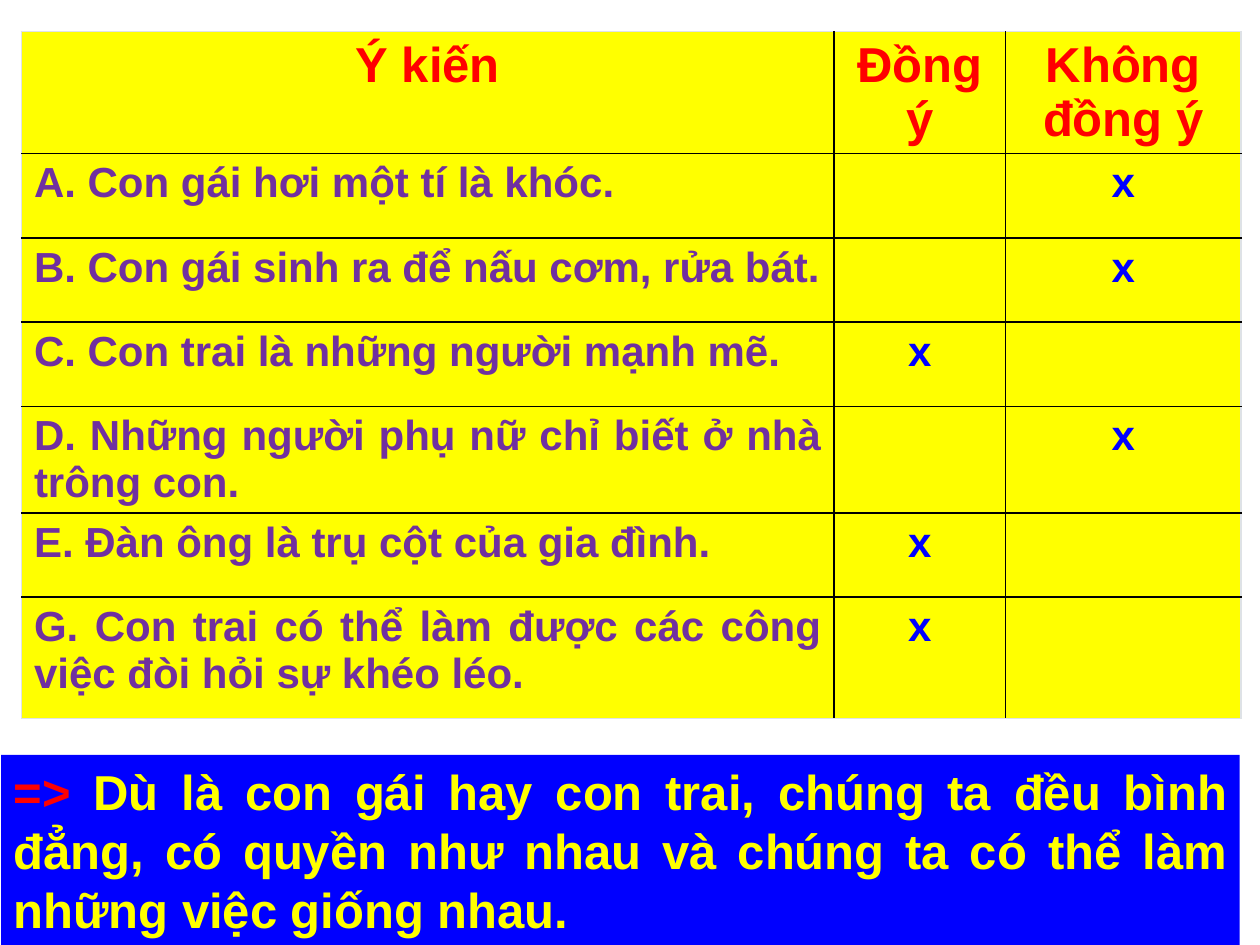
from dataclasses import dataclass

import pptx
import pptx.dml.color
import pptx.enum.shapes
import pptx.enum.text
import pptx.oxml
import pptx.oxml.ns
import pptx.util
from pptx.util import Inches

ALIGN = pptx.enum.text.PP_ALIGN


@dataclass(frozen=True)
class Theme:
    font: str = "Arial"
    heading_size: int = 28
    body_size: int = 24
    red: str = "FF0000"
    yellow: str = "FFFF00"
    blue: str = "0000FF"
    purple: str = "7030A0"
    inner_line: str = "000000"
    outer_line: str = "DEE2E6"


THEME = Theme()

HEADERS = ["Ý kiến", "Đồng ý", "Không đồng ý"]
# Each opinion with whether the class agrees
OPINIONS = [
    ("A. Con gái hơi một tí là khóc.", False),
    ("B. Con gái sinh ra để nấu cơm, rửa bát.", False),
    ("C. Con trai là những người mạnh mẽ.", True),
    ("D. Những người phụ nữ chỉ biết ở nhà trông con.", False),
    ("E. Đàn ông là trụ cột của gia đình.", True),
    ("G. Con trai có thể làm được các công việc đòi hỏi sự khéo léo.", True),
]
CONCLUSION = ("Dù là con gái hay con trai, chúng ta đều bình đẳng, có quyền như nhau "
              "và chúng ta có thể làm những việc giống nhau.")
COLUMN_WIDTHS = [6.45, 1.36, 1.87]
ROW_HEIGHTS = [0.38] + [0.67] * 5 + [0.96]


def rgb(color):
    return pptx.dml.color.RGBColor.from_string(color)


def fill_solid(target, color):
    target.fill.solid()
    target.fill.fore_color.rgb = rgb(color)


def format_font(font, size, color=None):
    font.name = THEME.font
    font.size = pptx.util.Pt(size)
    font.bold = True
    if color:
        font.color.rgb = rgb(color)


def set_borders(cell, outer_sides):
    """Draw dark grid lines, with pale thin ones on the table's outer sides."""
    properties = cell._tc.get_or_add_tcPr()
    for side in "LRTB":
        outer = side in outer_sides
        color = THEME.outer_line if outer else THEME.inner_line
        width = pptx.util.Pt(0.75 if outer else 1)
        properties.append(pptx.oxml.parse_xml(
            f'<a:ln{side} {pptx.oxml.ns.nsdecls("a")} w="{width}">'
            f'<a:solidFill><a:srgbClr val="{color}"/></a:solidFill></a:ln{side}>'))


def write_cell(cell, text, size, color, alignment):
    paragraph = cell.text_frame.paragraphs[0]
    paragraph.text = text
    paragraph.alignment = alignment
    format_font(paragraph.font, size, color)


def add_opinion_table(slide):
    rows = [HEADERS] + [[opinion, "x" if agree else "", "" if agree else "x"]
                        for opinion, agree in OPINIONS]
    last_row, last_column = len(rows) - 1, len(HEADERS) - 1
    table = slide.shapes.add_table(
        len(rows), len(HEADERS), Inches(0.17), Inches(0.25),
        Inches(sum(COLUMN_WIDTHS)), Inches(sum(ROW_HEIGHTS))).table
    table.first_row = False
    table.horz_banding = False
    for column, width in zip(table.columns, COLUMN_WIDTHS):
        column.width = Inches(width)
    for row, height in zip(table.rows, ROW_HEIGHTS):
        row.height = Inches(height)

    for row_index, texts in enumerate(rows):
        for column_index, text in enumerate(texts):
            cell = table.cell(row_index, column_index)
            outer_sides = [side for side, is_outer in (
                ("L", column_index == 0), ("R", column_index == last_column),
                ("T", row_index == 0), ("B", row_index == last_row)) if is_outer]
            set_borders(cell, outer_sides)
            fill_solid(cell, THEME.yellow)
            if row_index == 0:
                write_cell(cell, text, THEME.heading_size, THEME.red, ALIGN.CENTER)
            elif column_index == 0:
                write_cell(cell, text, THEME.body_size, THEME.purple, ALIGN.JUSTIFY)
            elif text:
                write_cell(cell, text, THEME.body_size, THEME.blue, ALIGN.CENTER)


def add_conclusion(slide):
    banner = slide.shapes.add_shape(
        pptx.enum.shapes.MSO_SHAPE.RECTANGLE,
        Inches(0.01), Inches(5.99), Inches(9.83), Inches(1.51))
    banner.shadow.inherit = False
    fill_solid(banner, THEME.blue)
    banner.line.fill.background()
    frame = banner.text_frame
    frame.word_wrap = True
    frame.vertical_anchor = pptx.enum.text.MSO_ANCHOR.MIDDLE
    paragraph = frame.paragraphs[0]
    paragraph.alignment = ALIGN.JUSTIFY
    format_font(paragraph.font, THEME.heading_size)
    for text, color in (("=> ", THEME.red), (CONCLUSION, THEME.yellow)):
        run = paragraph.add_run()
        run.text = text
        format_font(run.font, THEME.heading_size, color)


def main():
    presentation = pptx.Presentation()
    presentation.slide_width = Inches(10)
    presentation.slide_height = Inches(7.5)
    # The slide has no title, so the blank layout fits
    slide = presentation.slides.add_slide(presentation.slide_layouts[6])
    add_opinion_table(slide)
    add_conclusion(slide)
    presentation.save("out.pptx")


if __name__ == "__main__":
    main()
